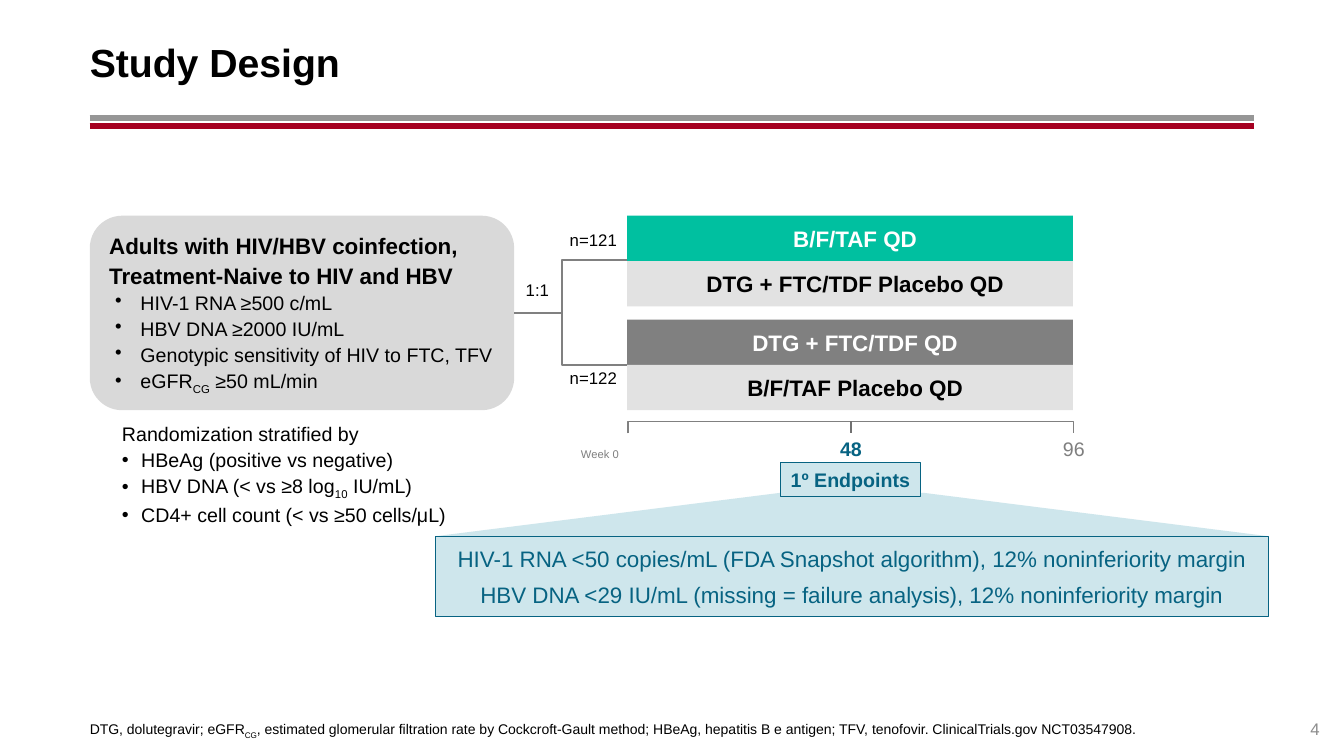
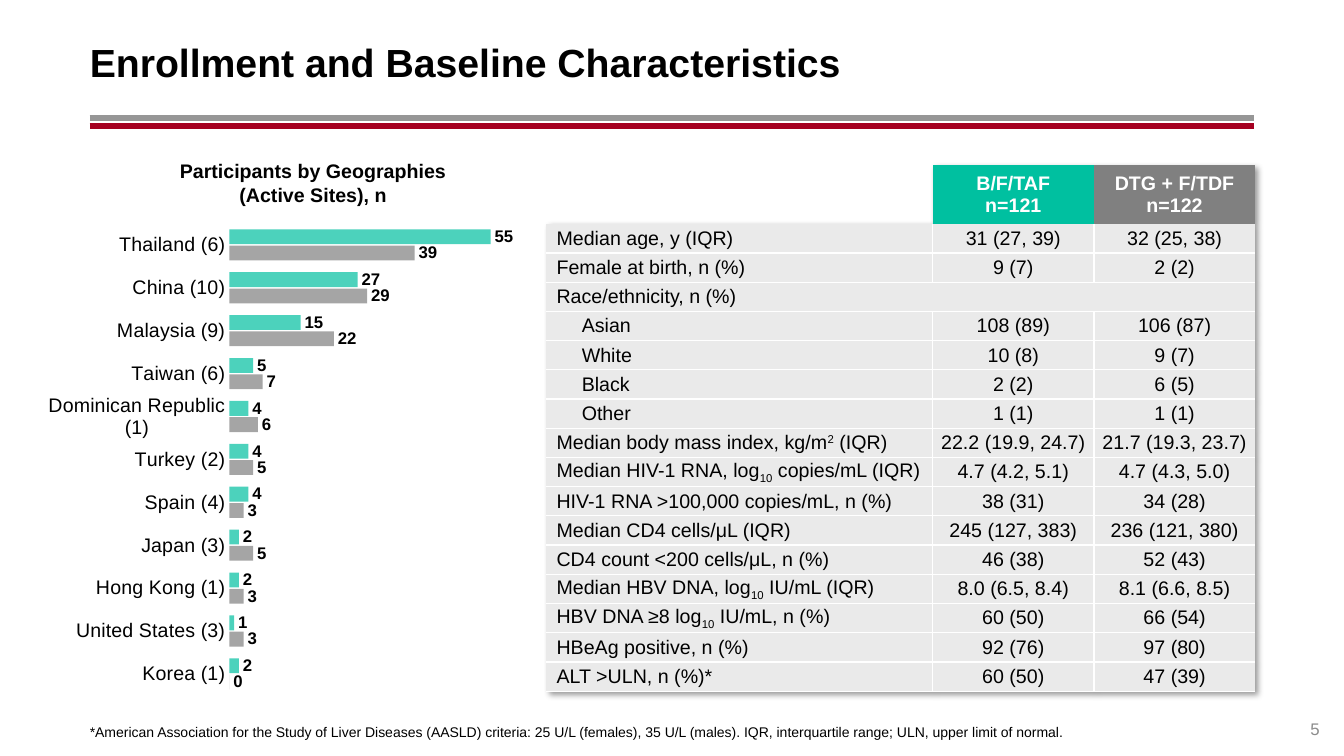
from pptx import Presentation
from pptx.chart.data import CategoryChartData
from pptx.dml.color import RGBColor
from pptx.enum.chart import XL_CHART_TYPE as ChartType, XL_LABEL_POSITION as LabelPosition
from pptx.enum.chart import XL_TICK_MARK as TickMark
from pptx.enum.shapes import MSO_CONNECTOR as Connector, MSO_SHAPE as Preset
from pptx.enum.text import MSO_ANCHOR as Anchor, MSO_AUTO_SIZE as AutoSize, PP_ALIGN as Align
from pptx.oxml import parse_xml
from pptx.oxml.ns import nsdecls
from pptx.oxml.xmlchemy import OxmlElement
from pptx.util import Inches, Pt

FONT = "Arial"
COLORS = {
    "black": "000000", "white": "FFFFFF", "crimson": "A50021", "rule": "969696",
    "number": "8C8C8C", "teal": "00C0A0", "gray": "808080", "week": "7F7F7F",
    "tick": "717171", "placebo": "E2E2E2", "criteria": "D9D9D9", "cell": "EAEAEA",
    "ice": "CEE6EC", "petrol": "076382",
}
LEFT, RIGHT, WIDTH = 0.89, 12.44, 11.55
TITLE_AND_CONTENT, TWO_CONTENT = 1, 3
DEFAULT_INSETS = (0.1, 0.05, 0.1, 0.05)


def rgb(name):
    return RGBColor.from_string(COLORS[name])


def write(frame, lines, size=14, color="black", bold=False, align=Align.LEFT,
          spacing=1.0, before=0, bullet=None, indent=(0, 0)):
    """Append paragraphs; in a line, |_x| is a subscript and |^x| a superscript."""
    for line in lines:
        paragraph = frame.add_paragraph() if frame.text else frame.paragraphs[0]
        paragraph.alignment = align
        paragraph.line_spacing = spacing
        paragraph.space_before = Pt(before)
        properties = paragraph._p.get_or_add_pPr()
        properties.set("marL", str(Inches(indent[0])))
        properties.set("indent", str(Inches(indent[1])))
        mark = OxmlElement("a:buChar" if bullet else "a:buNone")
        if bullet:
            mark.set("char", bullet)
        properties.append(mark)
        for part in line.split("|"):
            baseline = {"_": "-25000", "^": "30000"}.get(part[:1])
            run = paragraph.add_run()
            run.text = part[1:] if baseline else part
            run.font.name, run.font.size, run.font.bold = FONT, Pt(size), bold
            run.font.color.rgb = rgb(color)
            if baseline:
                run._r.get_or_add_rPr().set("baseline", baseline)


class Deck:
    """Holds the shared style and the current slide."""

    def __init__(self):
        self.presentation = Presentation()
        self.presentation.slide_width = Inches(13.33)
        self.presentation.slide_height = Inches(7.5)
        self.slide = None

    def new_slide(self, title, number, footnote, layout):
        layouts = self.presentation.slide_layouts
        self.slide = self.presentation.slides.add_slide(layouts[layout])
        for y, color in ((1.17, "rule"), (1.25, "crimson")):
            self.line((LEFT, y), (RIGHT, y), color, 4.25)
        frame = self.placeholder(0, (LEFT, 0.18, WIDTH, 0.86), Anchor.MIDDLE, (0, 0.05, 0.1, 0.05))
        write(frame, [title], size=28, bold=True)
        frame = self.placeholder(1, (LEFT, 7.17, WIDTH, 0.17), Anchor.BOTTOM)
        write(frame, [footnote], size=10)
        self.text((RIGHT, 6.93, 0.65, 0.4), [number], anchor=Anchor.BOTTOM, insets=(0, 0, 0, 0),
                  size=12, color="number", align=Align.RIGHT)

    def frame(self, shape, anchor, insets, wrap=True):
        frame = shape.text_frame
        frame.auto_size = AutoSize.NONE
        frame.word_wrap = wrap
        frame.vertical_anchor = anchor
        (frame.margin_left, frame.margin_top,
         frame.margin_right, frame.margin_bottom) = map(Inches, insets)
        return frame

    def placeholder(self, index, box, anchor, insets=(0, 0, 0, 0)):
        shape = self.slide.placeholders[index]
        shape.left, shape.top, shape.width, shape.height = map(Inches, box)
        return self.frame(shape, anchor, insets)

    def text(self, box, lines, anchor=Anchor.TOP, insets=DEFAULT_INSETS, wrap=True, **style):
        shape = self.slide.shapes.add_textbox(*map(Inches, box))
        write(self.frame(shape, anchor, insets, wrap), lines, **style)

    def shape(self, preset, box, fill, lines=(), outline=None, insets=DEFAULT_INSETS, **style):
        shape = self.slide.shapes.add_shape(preset, *map(Inches, box))
        shape.shadow.inherit = False
        shape.fill.solid()
        shape.fill.fore_color.rgb = rgb(fill)
        if outline:
            shape.line.color.rgb = rgb(outline)
            shape.line.width = Pt(0.75)
        else:
            shape.line.fill.background()
        write(self.frame(shape, Anchor.MIDDLE, insets), lines, **style)
        return shape

    def line(self, start, end, color, width, source=None):
        ends = map(Inches, (*start, *end))
        connector = self.slide.shapes.add_connector(Connector.STRAIGHT, *ends)
        if source:
            connector.begin_connect(source, 3)
        connector.line.color.rgb = rgb(color)
        connector.line.width = Pt(width)
        connector._element.spPr.append(OxmlElement("a:effectLst"))

    def bracket(self, points, color, width):
        start, *others = [(Inches(x), Inches(y)) for x, y in points]
        builder = self.slide.shapes.build_freeform(*start)
        builder.add_line_segments(others, close=False)
        shape = builder.convert_to_shape()
        shape.shadow.inherit = False
        shape.fill.background()
        shape.line.color.rgb = rgb(color)
        shape.line.width = Pt(width)

    def table(self, box, widths, heights):
        shape = self.slide.shapes.add_table(len(heights), len(widths), *map(Inches, box))
        table = shape.table
        table.first_row = table.horz_banding = False
        for column, width in zip(table.columns, widths):
            column.width = Inches(width)
        for row, height in zip(table.rows, heights):
            row.height = Inches(height)
        properties = table._tbl.tblPr
        properties[0].text = "{2D5ABB26-0587-4C30-8999-92F81FD0307C}"  # no style, no grid
        properties.insert(0, parse_xml(
            f'<a:effectLst {nsdecls("a")}><a:outerShdw blurRad="50800" dist="38100" dir="2700000">'
            '<a:srgbClr val="000000"><a:alpha val="40000"/></a:srgbClr></a:outerShdw></a:effectLst>'))
        return table

    def cell(self, cell, lines, fill=None, borders=(), insets=(0, 0.01, 0, 0.01), **style):
        for side in borders:
            cell._tc.get_or_add_tcPr().append(parse_xml(
                f'<a:{side} {nsdecls("a")} w="12700"><a:solidFill>'
                f'<a:srgbClr val="{COLORS["white"]}"/></a:solidFill></a:{side}>'))
        if fill:
            cell.fill.solid()
            cell.fill.fore_color.rgb = rgb(fill)
        else:
            cell.fill.background()
        cell.vertical_anchor = Anchor.MIDDLE
        (cell.margin_left, cell.margin_top,
         cell.margin_right, cell.margin_bottom) = map(Inches, insets)
        write(cell.text_frame, lines, **style)

    def bar_chart(self, box, categories, series, plot_area, maximum):
        data = CategoryChartData()
        data.categories = categories
        for name, _, values in series:
            data.add_series(name, values)
        chart = self.slide.shapes.add_chart(
            ChartType.BAR_CLUSTERED, *map(Inches, box), data).chart
        chart.has_title = chart.has_legend = False
        chart.font.name, chart.font.size = FONT, Pt(10)
        chart.font.color.rgb = rgb("black")
        # Axes
        axis = chart.category_axis
        axis.reverse_order = True
        axis.major_tick_mark = axis.minor_tick_mark = TickMark.NONE
        axis.format.line.fill.background()
        axis.tick_labels.font.name, axis.tick_labels.font.size = FONT, Pt(14)
        axis.tick_labels.font.color.rgb = rgb("black")
        axis = chart.value_axis
        axis.minimum_scale, axis.maximum_scale = 0, maximum
        axis.has_major_gridlines = axis.visible = False
        # Bars and their labels
        plot = chart.plots[0]
        plot.gap_width, plot.overlap, plot.vary_by_categories = 80, -10, False
        for bars, (_, color, _) in zip(plot.series, series):
            bars.invert_if_negative = False
            bars.format.fill.solid()
            bars.format.fill.fore_color.rgb = rgb(color)
            alpha = OxmlElement("a:alpha")
            alpha.set("val", "70000")
            bars._element.xpath("./c:spPr/a:solidFill/a:srgbClr")[0].append(alpha)
            labels = bars.data_labels
            labels.show_value, labels.position = True, LabelPosition.OUTSIDE_END
            labels.font.name, labels.font.size, labels.font.bold = FONT, Pt(12), True
            labels.font.color.rgb = rgb("black")
        # Fixed inner plot area
        area = chart._chartSpace.chart.plotArea
        for old in area.xpath("./c:layout"):
            area.remove(old)
        places = "".join(f'<c:{key} val="{value}"/>' for key, value in zip("xywh", plot_area))
        area.insert(0, parse_xml(
            f'<c:layout {nsdecls("c")}><c:manualLayout><c:layoutTarget val="inner"/>'
            f'<c:xMode val="edge"/><c:yMode val="edge"/>{places}</c:manualLayout></c:layout>'))


def study_design(deck):
    deck.new_slide(
        "Study Design", "4",
        "DTG, dolutegravir; eGFR|_CG|, estimated glomerular filtration rate by Cockcroft-Gault method; "
        "HBeAg, hepatitis B e antigen; TFV, tenofovir. ClinicalTrials.gov NCT03547908.", TWO_CONTENT)
    # Population and stratification
    top, height = 2.14, 1.93
    criteria = deck.shape(
        Preset.ROUNDED_RECTANGLE, (LEFT, top, 4.21, height), "criteria",
        ["Adults with HIV/HBV coinfection, Treatment-Naive to HIV and HBV"],
        size=16, bold=True, spacing=1.1)
    write(criteria.text_frame,
          ["HIV-1 RNA ≥500 c/mL", "HBV DNA ≥2000 IU/mL", "Genotypic sensitivity of HIV to FTC, TFV",
           "eGFR|_CG| ≥50 mL/min"], spacing=1.1, bullet="•", indent=(0.31, -0.25))
    frame = deck.placeholder(2, (1.21, 4.16, 3.92, 1.02), Anchor.TOP)
    write(frame, ["Randomization stratified by"], spacing=1.1)
    write(frame, ["HBeAg (positive vs negative)", "HBV DNA (< vs ≥8 log|_10| IU/mL)",
                  "CD4+ cell count (< vs ≥50 cells/μL)"],
          spacing=1.1, bullet="•", indent=(0.19, -0.19))
    # Randomization branches
    fork, arms_left, arms_width, middle = 5.57, 6.22, 4.42, top + height / 2
    deck.bracket([(arms_left, 3.62), (fork, 3.62), (fork, 2.58), (arms_left, 2.58)], "gray", 1.5)
    deck.line((5.1, middle), (fork, middle), "gray", 1.5, source=criteria)
    for box, label in (((5.55, 2.23, 0.67, 0.3), "n=121"), ((5.55, 3.6, 0.67, 0.3), "n=122"),
                       ((5.11, 2.73, 0.44, 0.3), "1:1")):
        deck.text(box, [label], wrap=False, size=12, align=Align.CENTER)
    # Treatment arms
    arms = (("B/F/TAF QD", "teal", "DTG + FTC/TDF Placebo QD"),
            ("DTG + FTC/TDF QD", "gray", "B/F/TAF Placebo QD"))
    for arm, (active, color, placebo) in enumerate(arms):
        rows = ((active, color, "white"), (placebo, "placebo", "black"))
        for row, (label, fill, ink) in enumerate(rows):
            deck.shape(Preset.RECTANGLE, (arms_left, top + 1.03 * arm + 0.45 * row, arms_width, 0.45),
                       fill, [label], insets=(0.2, 0.05, 0.1, 0.05),
                       size=16, color=ink, bold=True, align=Align.CENTER)
    # Week axis
    start, center, end = 6.23, 8.44, 10.65
    deck.bracket([(start, 4.3), (start, 4.18), (end, 4.18), (end, 4.3)], "gray", 1)
    deck.line((center, 4.18), (center, 4.3), "tick", 1)
    for x, width, label, style in (
            (5.95, 1.26, "Week 0", {"size": 8, "color": "week"}),
            (center, 0.42, "48", {"color": "petrol", "bold": True}),
            (end, 0.42, "96", {"color": "week"})):
        deck.text((x - width / 2, 4.28, width, 0.34), [label], anchor=Anchor.BOTTOM,
                  wrap=False, align=Align.CENTER, **style)
    # Endpoints callout
    flare = deck.shape(Preset.TRAPEZOID, (4.32, 4.89, 8.26, 0.43), "ice")
    flare.adjustments[0] = 7.94
    deck.shape(Preset.RECTANGLE, (4.32, 5.32, 8.26, 0.8), "ice",
               ["HIV-1 RNA <50 copies/mL (FDA Snapshot algorithm), 12% noninferiority margin",
                "HBV DNA <29 IU/mL (missing = failure analysis), 12% noninferiority margin"],
               outline="petrol", insets=(0.1, 0.1, 0.1, 0.1),
               size=16, color="petrol", align=Align.CENTER, before=6)
    deck.shape(Preset.RECTANGLE, (7.74, 4.59, 1.39, 0.34), "ice", ["1º Endpoints"],
               outline="petrol", insets=(0, 0.05, 0, 0.05),
               color="petrol", bold=True, align=Align.CENTER)


def baseline_characteristics(deck):
    deck.new_slide(
        "Enrollment and Baseline Characteristics", "5",
        "*American Association for the Study of Liver Diseases (AASLD) criteria: 25 U/L (females), "
        "35 U/L (males). IQR, interquartile range; ULN, upper limit of normal.", TITLE_AND_CONTENT)
    # Characteristics table
    rows = [
        ("Median age, y (IQR)", "31 (27, 39)", "32 (25, 38)"),
        ("Female at birth, n (%)", "9 (7)", "2 (2)"),
        ("Race/ethnicity, n (%)", "", ""),
        ("Asian", "108 (89)", "106 (87)"),
        ("White", "10 (8)", "9 (7)"),
        ("Black", "2 (2)", "6 (5)"),
        ("Other", "1 (1)", "1 (1)"),
        ("Median body mass index, kg/m|^2| (IQR)", "22.2 (19.9, 24.7)", "21.7 (19.3, 23.7)"),
        ("Median HIV-1 RNA, log|_10| copies/mL (IQR)", "4.7 (4.2, 5.1)", "4.7 (4.3, 5.0)"),
        ("HIV-1 RNA >100,000 copies/mL, n (%)", "38 (31)", "34 (28)"),
        ("Median CD4 cells/μL (IQR)", "245 (127, 383)", "236 (121, 380)"),
        ("CD4 count <200 cells/μL, n (%)", "46 (38)", "52 (43)"),
        ("Median HBV DNA, log|_10| IU/mL (IQR)", "8.0 (6.5, 8.4)", "8.1 (6.6, 8.5)"),
        ("HBV DNA ≥8 log|_10| IU/mL, n (%)", "60 (50)", "66 (54)"),
        ("HBeAg positive, n (%)", "92 (76)", "97 (80)"),
        ("ALT >ULN, n (%)*", "60 (50)", "47 (39)"),
    ]
    table = deck.table((5.42, 1.64, 7.03, 5.22), (3.83, 1.6, 1.6), [0.58] + [0.29] * len(rows))
    headers = (([""], None), (["B/F/TAF", "n=121"], "teal"), (["DTG + F/TDF", "n=122"], "gray"))
    for column, (lines, fill) in enumerate(headers):
        deck.cell(table.cell(0, column), lines, fill, insets=(0, 0.02, 0, 0.02),
                  color="white", bold=True, align=Align.CENTER)
    races = ("Asian", "White", "Black", "Other")
    for index, (label, *values) in enumerate(rows, 1):
        if not any(values):
            table.cell(index, 0).merge(table.cell(index, 2))
        deck.cell(table.cell(index, 0), [label], "cell", ["lnB"], (0.1, 0.01, 0, 0.01),
                  indent=(0.25 if label in races else 0, 0))
        for column, value in enumerate(values, 1):
            deck.cell(table.cell(index, column), [value], "cell",
                      ["lnL", "lnB"] if value else ["lnB"], align=Align.CENTER)
    # Participants chart
    countries = ["Thailand (6)", "China (10)", "Malaysia (9)", "Taiwan (6)", "Dominican Republic (1)",
                 "Turkey (2)", "Spain (4)", "Japan (3)", "Hong Kong (1)", "United States (3)",
                 "Korea (1)"]
    deck.bar_chart((0.48, 1.81, 5.25, 5.09), countries,
                   [("B/F/TAF", "teal", (55, 27, 15, 5, 4, 4, 4, 2, 2, 1, 2)),
                    ("DTG + F/TDF", "gray", (39, 29, 22, 7, 6, 5, 3, 5, 3, 3, 0))],
                   plot_area=(0.34, 0.08, 0.54, 0.92), maximum=60)
    deck.text((1.25, 1.53, 3.71, 0.57), ["Participants by Geographies", "(Active Sites), n"],
              bold=True, align=Align.CENTER)


def main():
    deck = Deck()
    study_design(deck)
    baseline_characteristics(deck)
    deck.presentation.save("out.pptx")


if __name__ == "__main__":
    main()
